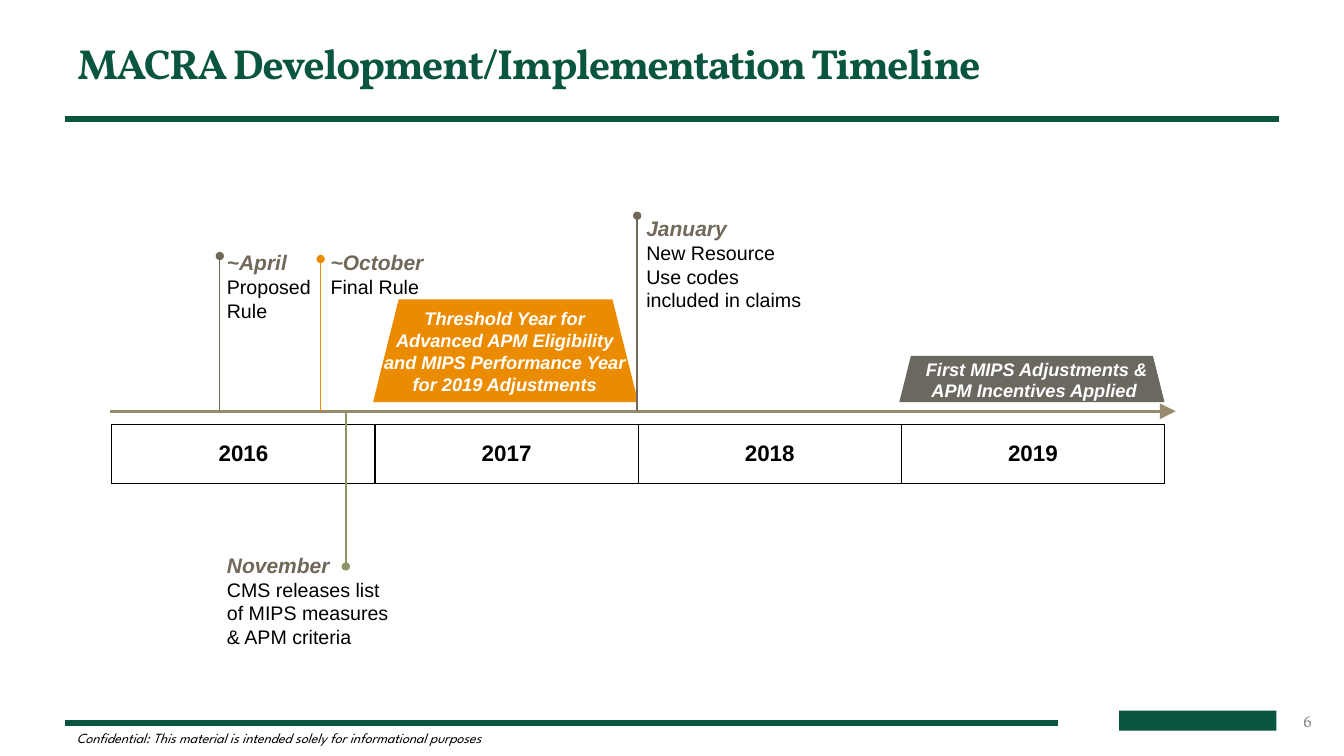
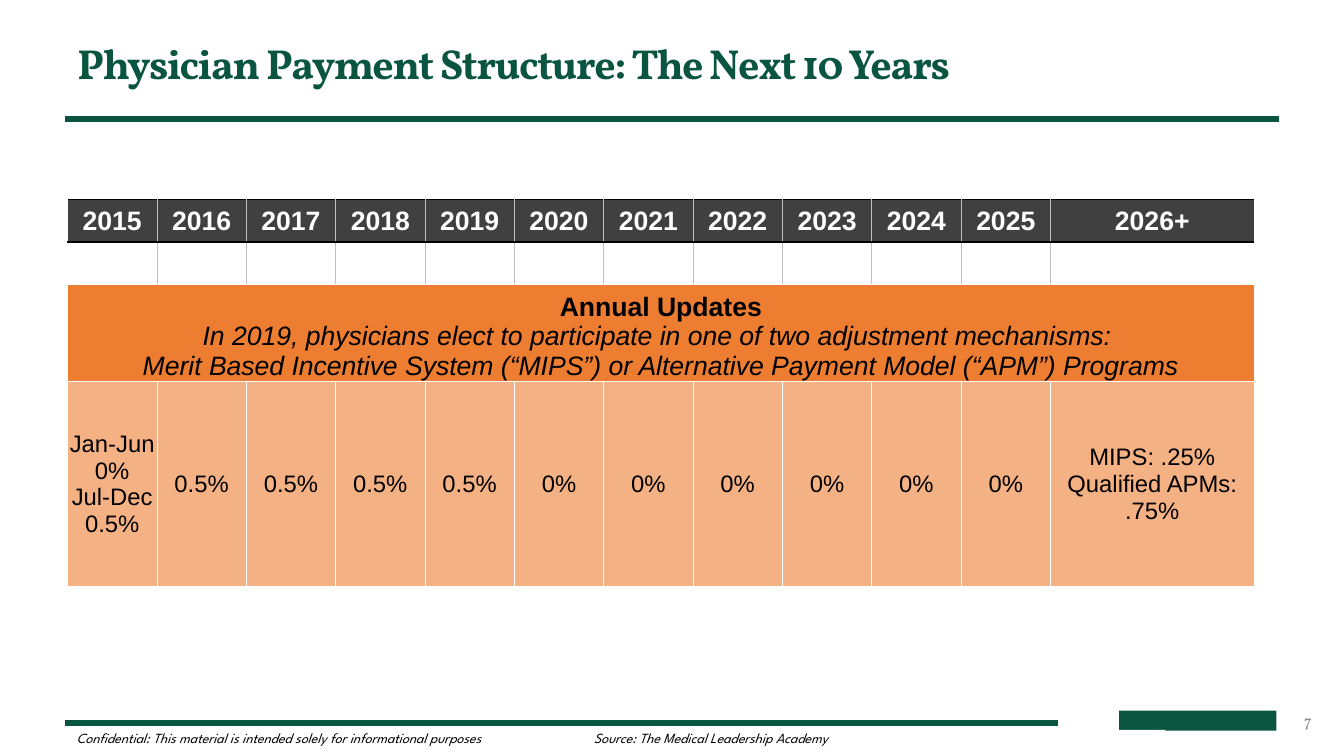
"""Build two slides on physician payment reform: a timeline and a yearly update table."""
from dataclasses import dataclass
from typing import Any, Optional, Sequence

from lxml.etree import SubElement
from pptx import Presentation
from pptx.dml.color import RGBColor
from pptx.enum.shapes import MSO_CONNECTOR as LINE, MSO_SHAPE as SHAPE
from pptx.enum.text import MSO_ANCHOR as ANCHOR, PP_ALIGN as ALIGN
from pptx.oxml.ns import qn
from pptx.util import Inches, Pt

GREEN, ORANGE, TAUPE, OLIVE = "0A5540", "EB8C00", "71685A", "909465"
SAND, STONE, SILVER = "968C6D", "6B6860", "BFBFBF"
BLACK, WHITE = "000000", "FFFFFF"
NO_STYLE = "{2D5ABB26-0587-4C30-8999-92F81FD0307C}"

Format = dict[str, Any]
Box = tuple[float, float, float, float]
Border = tuple[str, float]

TITLE: Format = dict(name="Vollkorn", size=Pt(30), bold=True, color=GREEN)
NUMBER: Format = dict(name="Vollkorn", size=Pt(12), color="898989")
NOTE: Format = dict(name="League Spartan", size=Pt(10), italic=True, color=BLACK)
MONTH: Format = dict(name="Arial", size=Pt(15), bold=True, italic=True, color=TAUPE)
BODY: Format = dict(name="Arial", size=Pt(14), color=BLACK)
BANNER: Format = MONTH | dict(size=Pt(13), color=WHITE)
YEAR: Format = dict(name="Arial", size=Pt(16), bold=True, color=BLACK)
HEADER: Format = YEAR | dict(size=Pt(19), color=WHITE)
UPDATE: Format = HEADER | dict(color=BLACK)
CHOICE: Format = UPDATE | dict(bold=False, italic=True)
RATE: Format = BODY | dict(size=Pt(17))


@dataclass
class Para:
    text: str
    fmt: Format


@dataclass
class Milestone:
    x: float
    dot_y: float
    color: str
    label: Box
    month: str
    text: Sequence[str]


@dataclass
class Banner:
    box: Box
    label: Box
    fill: str
    text: str


@dataclass
class Row:
    height: float
    cells: Sequence[Sequence[Para]]
    fill: Optional[str]
    side: Border
    top: Border
    bottom: Border
    anchor: Any = ANCHOR.MIDDLE
    outer: Optional[Border] = None


AXIS_Y = 4.08
MILESTONES = [
    Milestone(2.18, 2.54, TAUPE, (2.25, 2.48, 0.9, 0.72), "~April", ["Proposed", "Rule"]),
    Milestone(3.18, 2.57, ORANGE, (3.28, 2.48, 1, 0.49), "~October", ["Final Rule"]),
    Milestone(3.43, 5.62, OLIVE, (2.25, 5.48, 1.62, 1.13), "November",
              ["CMS releases list of MIPS measures & APM criteria"]),
    Milestone(6.32, 2.14, TAUPE, (6.41, 2.14, 1.62, 1.13), "January",
              ["New Resource Use codes included in claims"]),
]
BANNERS = [
    Banner((3.7, 2.97, 2.63, 1.02), (3.78, 3.05, 2.45, 0.88), ORANGE,
           "Threshold Year for Advanced APM Eligibility and MIPS Performance Year "
           "for 2019 Adjustments"),
    Banner((8.92, 3.53, 2.63, 0.46), (9.11, 3.55, 2.34, 0.44), STONE,
           "First MIPS Adjustments & APM Incentives Applied "),
]


def rgb(color: str) -> RGBColor:
    """Turn a hex string into a colour."""
    return RGBColor.from_string(color)


def write(tf: Any, paras: Sequence[Para], align: Any = ALIGN.LEFT) -> None:
    """Fill a text frame with formatted paragraphs."""
    for i, para in enumerate(paras):
        p = tf.paragraphs[0] if i == 0 else tf.add_paragraph()
        p.alignment = align
        r = p.add_run()
        r.text = para.text
        for key, value in para.fmt.items():
            if key == "color":
                r.font.color.rgb = rgb(value)
            else:
                setattr(r.font, key, value)


def add_shape(s: Any, kind: Any, box: Box, fill: str) -> Any:
    """Add a flat filled shape without outline."""
    sp = s.shapes.add_shape(kind, *map(Inches, box))
    sp.shadow.inherit = False
    sp.fill.solid()
    sp.fill.fore_color.rgb = rgb(fill)
    sp.line.fill.background()
    return sp


def add_text(s: Any, box: Box, paras: Sequence[Para], align: Any = ALIGN.LEFT,
             anchor: Any = ANCHOR.TOP, inset: bool = False, fill: Optional[str] = None) -> Any:
    """Add wrapped text in a box, on a fill if one is given."""
    if fill:
        sp = add_shape(s, SHAPE.RECTANGLE, box, fill)
    else:
        sp = s.shapes.add_textbox(*map(Inches, box))
    tf = sp.text_frame
    tf.word_wrap = True
    tf.vertical_anchor = anchor
    if not inset:
        tf.margin_left = tf.margin_right = tf.margin_top = tf.margin_bottom = 0
    write(tf, paras, align)
    return sp


def add_line(s: Any, start: tuple[float, float], end: tuple[float, float], color: str,
             width: float, tip: Optional[str] = None, tip_size: str = "med") -> None:
    """Add a straight line, with an optional tip at its end."""
    cx = s.shapes.add_connector(LINE.STRAIGHT, *map(Inches, start + end))
    cx.line.color.rgb = rgb(color)
    cx.line.width = Pt(width)
    if tip:
        SubElement(cx.line._get_or_add_ln(), qn("a:tailEnd"), type=tip, w=tip_size, len=tip_size)
    SubElement(cx._element.spPr, qn("a:effectLst"))


def add_border(cell: Any, side: str, border: Border) -> None:
    """Draw one border of a table cell."""
    color, width = border
    ln = SubElement(cell._tc.get_or_add_tcPr(), qn(f"a:ln{side}"), w=str(Pt(width)))
    SubElement(SubElement(ln, qn("a:solidFill")), qn("a:srgbClr"), val=color)


def add_table(s: Any, left: float, top: float, widths: Sequence[float],
              rows: Sequence[Row], inset: Optional[float] = None) -> None:
    """Add a table; a row with a single cell spans all columns."""
    last = len(widths) - 1
    frame = s.shapes.add_table(len(rows), len(widths), Inches(left), Inches(top),
                               Inches(sum(widths)), Inches(sum(r.height for r in rows)))
    table = frame.table
    table.first_row = table.horz_banding = False
    table._tbl.tblPr.find(qn("a:tableStyleId")).text = NO_STYLE
    for column, width in zip(table.columns, widths):
        column.width = Inches(width)
    for i, row in enumerate(rows):
        table.rows[i].height = Inches(row.height)
        if len(row.cells) == 1:
            table.cell(i, 0).merge(table.cell(i, last))
        outer = row.outer or row.side
        for j in range(len(widths)):
            cell = table.cell(i, j)
            add_border(cell, "L", outer if j == 0 else row.side)
            add_border(cell, "R", outer if j == last else row.side)
            add_border(cell, "T", row.top)
            add_border(cell, "B", row.bottom)
            if row.fill:
                cell.fill.solid()
                cell.fill.fore_color.rgb = rgb(row.fill)
            else:
                cell.fill.background()
            cell.vertical_anchor = row.anchor
            if inset is not None:
                cell.margin_left = cell.margin_right = cell.margin_top = Inches(inset)
                cell.margin_bottom = 0
            if j < len(row.cells):
                write(cell.text_frame, row.cells[j], ALIGN.CENTER)


def add_base(prs: Any, title: str, number: int) -> Any:
    """Add a slide with the shared title, rules and footer."""
    s = prs.slides.add_slide(prs.slide_layouts[6])
    add_line(s, (0.64, 7.17), (10.49, 7.17), GREEN, 4.5)
    add_shape(s, SHAPE.RECTANGLE, (11.1, 7.05, 1.56, 0.2), GREEN)
    add_line(s, (0.64, 1.18), (12.69, 1.18), GREEN, 4.5)
    sp = add_text(s, (0.67, 0.08, 12, 1.08), [Para(title, TITLE)],
                  anchor=ANCHOR.MIDDLE, inset=True)
    sp.text_frame.paragraphs[0].runs[0].font._element.set("spc", "-100")
    add_text(s, (10, 6.95, 3.11, 0.4), [Para(str(number), NUMBER)], ALIGN.RIGHT,
             ANCHOR.MIDDLE, inset=True)
    add_text(s, (0.76, 7.24, 8.58, 0.17),
             [Para("Confidential: This material is intended solely for informational purposes",
                   NOTE)])
    return s


def build_timeline(prs: Any) -> None:
    """Build the timeline slide."""
    s = add_base(prs, "MACRA Development/Implementation Timeline", 6)
    for banner in BANNERS:
        add_shape(s, SHAPE.TRAPEZOID, banner.box, banner.fill)
        add_text(s, banner.label, [Para(banner.text, BANNER)], ALIGN.CENTER)
    add_line(s, (1.09, AXIS_Y), (11.66, AXIS_Y), SAND, 2.25, "triangle", "lg")
    edge = (BLACK, 1)
    years = [[Para(str(year), YEAR)] for year in range(2016, 2020)]
    add_table(s, 1.11, 4.21, [2.61] * len(years), [Row(0.59, years, None, edge, edge, edge)])
    for m in MILESTONES:
        add_line(s, (m.x, AXIS_Y), (m.x, m.dot_y), m.color, 1, "oval")
        add_text(s, m.label, [Para(m.month, MONTH)] + [Para(t, BODY) for t in m.text])


def build_payments(prs: Any) -> None:
    """Build the payment update slide."""
    s = add_base(prs, "Physician Payment Structure: The Next 10 Years", 7)
    years = [str(year) for year in range(2015, 2026)] + ["2026+"]
    rates = [["Jan-Jun", "0%", "Jul-Dec", "0.5%"], *[["0.5%"]] * 4, *[["0%"]] * 6,
             ["MIPS: .25%", "Qualified APMs: .75%"]]
    updates = [
        Para("Annual Updates", UPDATE),
        Para("In 2019, physicians elect to participate in one of two adjustment mechanisms: ",
             CHOICE),
        Para("Merit Based Incentive System (“MIPS”) or Alternative Payment Model (“APM”) Programs",
             CHOICE),
    ]
    thin, grey, heavy = (WHITE, 0.5), (SILVER, 0.5), (BLACK, 2)
    rows = [
        Row(0.42, [[Para(year, HEADER)] for year in years], "404040", grey, (BLACK, 1.5), heavy,
            outer=thin),
        Row(0.42, [[] for _ in years], WHITE, grey, heavy, thin, outer=thin),
        Row(0.86, [updates], "ED7D31", thin, thin, thin, ANCHOR.BOTTOM),
        Row(2.04, [[Para(t, RATE) for t in lines] for lines in rates], "F4B184",
            thin, thin, thin),
    ]
    total, wide = 11.77, 2.02
    narrow = len(years) - 1
    add_table(s, 0.67, 1.98, [(total - wide) / narrow] * narrow + [wide], rows, inset=0.01)
    add_text(s, (5.89, 7.24, 5.67, 0.17), [Para("Source: The Medical Leadership Academy", NOTE)],
             fill=WHITE)


def main() -> None:
    """Build and save the presentation."""
    prs = Presentation()
    prs.slide_width, prs.slide_height = Inches(13.33), Inches(7.5)
    build_timeline(prs)
    build_payments(prs)
    prs.save("out.pptx")


if __name__ == "__main__":
    main()
